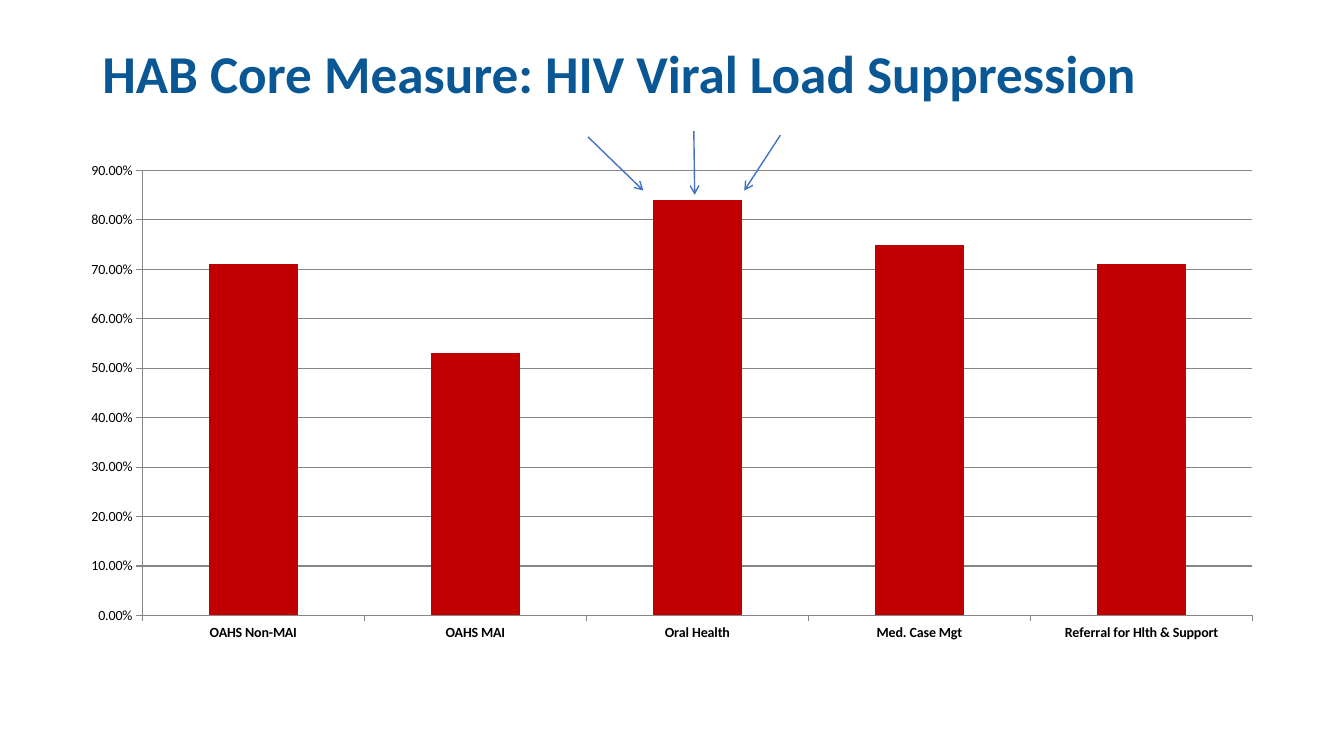
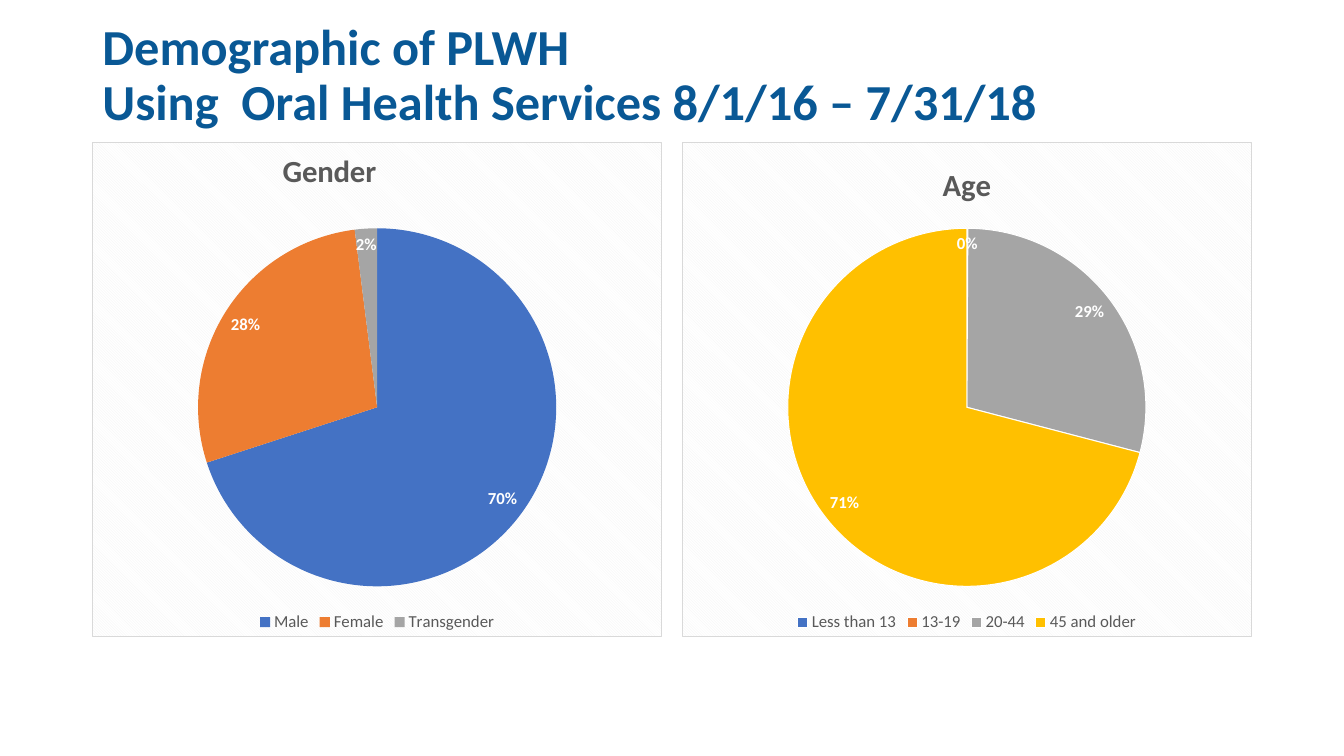
from lxml import etree
from pptx import Presentation
from pptx.chart.data import CategoryChartData
from pptx.dml.color import RGBColor
from pptx.enum.chart import XL_CHART_TYPE, XL_LABEL_POSITION, XL_LEGEND_POSITION, XL_TICK_MARK
from pptx.enum.shapes import MSO_CONNECTOR
from pptx.enum.text import MSO_ANCHOR, MSO_AUTO_SIZE, PP_ALIGN
from pptx.oxml import parse_xml
from pptx.oxml.ns import nsdecls, qn
from pptx.util import Inches, Pt

COLUMN_CHART = XL_CHART_TYPE.COLUMN_CLUSTERED
PIE_CHART = XL_CHART_TYPE.PIE
INSIDE_END = XL_LABEL_POSITION.INSIDE_END
LEGEND_BOTTOM = XL_LEGEND_POSITION.BOTTOM
TICK_OUTSIDE = XL_TICK_MARK.OUTSIDE
STRAIGHT = MSO_CONNECTOR.STRAIGHT
MIDDLE = MSO_ANCHOR.MIDDLE
NO_AUTOSIZE = MSO_AUTO_SIZE.NONE
LEFT = PP_ALIGN.LEFT

FONT = "Calibri"
COLORS = {
    "title": "095895", "text": "000000", "muted": "595959", "white": "FFFFFF",
    "axis": "868686", "bar": "C00000", "hatch": "F2F2F2", "border": "D9D9D9",
    "blue": "4472C4", "orange": "ED7D31", "gray": "A5A5A5", "gold": "FFC000",
}
PIE_COLORS = ["blue", "orange", "gray", "gold"]
GRID_COLUMNS, GRID_ROWS = 160, 90
MARGIN, CONTENT_WIDTH, GAP = 11, 138, 2.4


def rgb(name):
    """Return the named palette colour."""
    return RGBColor.from_string(COLORS[name])


def style_font(font, size, color="text", bold=False):
    """Format a font in the deck's typeface."""
    font.name, font.size, font.bold = FONT, Pt(size), bold
    font.color.rgb = rgb(color)


def write_text(frame, text, size, color="text", bold=False, align=None, line_spacing=None):
    """Write formatted text into the first paragraph of a frame."""
    paragraph = frame.paragraphs[0]
    paragraph.text = text
    paragraph.alignment = align
    paragraph.line_spacing = line_spacing
    for run in paragraph.runs:
        style_font(run.font, size, color, bold)
    for line_break in paragraph._p.findall(qn("a:br")):
        etree.SubElement(line_break, qn("a:rPr"), sz=str(size * 100))


def layout_xml(target="", **shares):
    """Build a manual layout from shares of the chart's size."""
    inner = f'<c:layoutTarget val="{target}"/>' if target else ""
    modes = '<c:xMode val="edge"/><c:yMode val="edge"/>'
    values = "".join(f'<c:{key} val="{share}"/>' for key, share in shares.items())
    return parse_xml(f'<c:layout {nsdecls("c")}><c:manualLayout>{inner}{modes}{values}'
                     '</c:manualLayout></c:layout>')


def set_layout(parent, layout, index):
    """Replace the layout of a chart part."""
    for old_layout in parent.findall(qn("c:layout")):
        parent.remove(old_layout)
    parent.insert(index, layout)


class Deck:
    """Holds the shared style and the current slide."""

    def __init__(self):
        """Start a widescreen presentation."""
        self.presentation = Presentation()
        self.presentation.slide_width = Inches(13.333)
        self.presentation.slide_height = Inches(7.5)
        self.slide = None

    def cells(self, *lengths):
        """Convert alternating grid columns and rows to lengths."""
        units = (self.presentation.slide_width / GRID_COLUMNS,
                 self.presentation.slide_height / GRID_ROWS)
        return [round(length * units[index % 2]) for index, length in enumerate(lengths)]

    def add_slide(self, title, size):
        """Add a slide with a formatted title."""
        self.slide = self.presentation.slides.add_slide(self.presentation.slide_layouts[5])
        shape = self.slide.shapes.title
        shape.left, shape.top, shape.width, shape.height = self.cells(
            MARGIN, 3.68, CONTENT_WIDTH, 10.9)
        frame = shape.text_frame
        frame.word_wrap, frame.auto_size, frame.vertical_anchor = True, NO_AUTOSIZE, MIDDLE
        write_text(frame, title, size, color="title", bold=True, align=LEFT, line_spacing=0.9)

    def add_chart(self, kind, place, name, values, colors, plot_layout):
        """Add a one-series chart with coloured points."""
        data = CategoryChartData()
        data.categories = list(values)
        data.add_series(name, list(values.values()))
        chart = self.slide.shapes.add_chart(kind, *self.cells(*place), data).chart
        style_font(chart.font, 10)
        chart.has_legend = chart.has_title = False
        for index, color in enumerate(colors[:len(values)]):
            fill = chart.plots[0].series[0].points[index].format.fill
            fill.solid()
            fill.fore_color.rgb = rgb(color)
        set_layout(chart.element.find(".//" + qn("c:plotArea")), plot_layout, 0)
        return chart

    def add_columns(self, place, name, values):
        """Add a column chart with percentage gridlines."""
        plot_layout = layout_xml("inner", x=0.062, y=0.037, w=0.918, h=0.892)
        chart = self.add_chart(COLUMN_CHART, place, name, values, ["bar"] * len(values), plot_layout)
        chart.plots[0].gap_width = 150
        chart.plots[0].vary_by_categories = False
        value_axis, category_axis = chart.value_axis, chart.category_axis
        value_axis.minimum_scale, value_axis.maximum_scale, value_axis.major_unit = 0, 0.9, 0.1
        value_axis.tick_labels.number_format = "0.00%"
        value_axis.tick_labels.number_format_is_linked = False
        value_axis.has_major_gridlines = True
        for axis in (value_axis, category_axis):
            axis.major_tick_mark = TICK_OUTSIDE
            style_font(axis.tick_labels.font, 10, bold=axis is category_axis)
        for part in (value_axis, category_axis, value_axis.major_gridlines):
            part.format.line.color.rgb = rgb("axis")
            part.format.line.width = Pt(0.75)

    def add_pie(self, place, name, values, title_layout=None, outlined=False):
        """Add a titled pie chart on a hatched panel."""
        plot_layout = layout_xml("inner", x=0.185, y=0.173, w=0.63, h=0.727)
        chart = self.add_chart(PIE_CHART, place, name, values, PIE_COLORS, plot_layout)
        chart.plots[0].vary_by_categories = True
        write_text(chart.chart_title.text_frame, name, 22, color="muted", bold=True)
        if title_layout is not None:
            set_layout(chart.chart_title.element, title_layout, 1)
        chart.has_legend = True
        chart.legend.position = LEGEND_BOTTOM
        chart.legend.include_in_layout = False
        style_font(chart.legend.font, 12, "muted")
        chart.plots[0].has_data_labels = True
        labels = chart.plots[0].data_labels
        labels.show_percentage, labels.show_value = True, False
        labels.number_format, labels.number_format_is_linked = "0%", False
        labels.position = INSIDE_END
        style_font(labels.font, 12, "white", bold=True)
        if outlined:
            for index in range(len(values)):
                line = chart.plots[0].series[0].points[index].format.line
                line.color.rgb, line.width = rgb("white"), Pt(0.75)
        chart.element.find(qn("c:chart")).addnext(parse_xml(
            f'<c:spPr {nsdecls("c", "a")}><a:pattFill prst="dkDnDiag">'
            f'<a:fgClr><a:srgbClr val="{COLORS["hatch"]}"/></a:fgClr>'
            f'<a:bgClr><a:srgbClr val="{COLORS["white"]}"/></a:bgClr></a:pattFill>'
            f'<a:ln w="{Pt(0.75)}"><a:solidFill><a:srgbClr val="{COLORS["border"]}"/>'
            '</a:solidFill></a:ln></c:spPr>'))

    def add_arrow(self, *ends):
        """Add a straight arrow between two grid points."""
        connector = self.slide.shapes.add_connector(STRAIGHT, *self.cells(*ends))
        connector.line.color.rgb = rgb("blue")
        connector.line.width = Pt(1)
        etree.SubElement(connector.line._get_or_add_ln(), qn("a:tailEnd"), type="arrow")
        etree.SubElement(connector._element.spPr, qn("a:effectLst"))


def main():
    """Build and save the two slides."""
    deck = Deck()

    deck.add_slide("HAB Core Measure: HIV Viral Load Suppression", 38)
    deck.add_columns((8, 18.1, 144, 59.4), "Series 1", {
        "OAHS Non-MAI": 0.71, "OAHS MAI": 0.53, "Oral Health": 0.84,
        "Med. Case Mgt": 0.75, "Referral for Hlth & Support": 0.71})
    for ends in ((70, 16.3, 76.6, 22.7), (92.9, 16.1, 88.6, 22.7), (82.6, 15.6, 82.7, 23.2)):
        deck.add_arrow(*ends)

    deck.add_slide("Demographic of PLWH\vUsing  Oral Health Services 8/1/16 – 7/31/18", 36)
    pie_width = (CONTENT_WIDTH - GAP) / 2
    pies = [
        ("Gender", {"Male": 70, "Female": 28, "Transgender": 2},
         layout_xml(x=0.324, y=0.002), False),
        ("Age", {"Less than 13": 0, "13-19": 0.1, "20-44": 29, "45 and older": 71}, None, True),
    ]
    for index, (name, values, title_layout, outlined) in enumerate(pies):
        left = MARGIN + index * (pie_width + GAP)
        deck.add_pie((left, 16.9, pie_width, 58.9), name, values, title_layout, outlined)

    deck.presentation.save("out.pptx")


if __name__ == "__main__":
    main()
